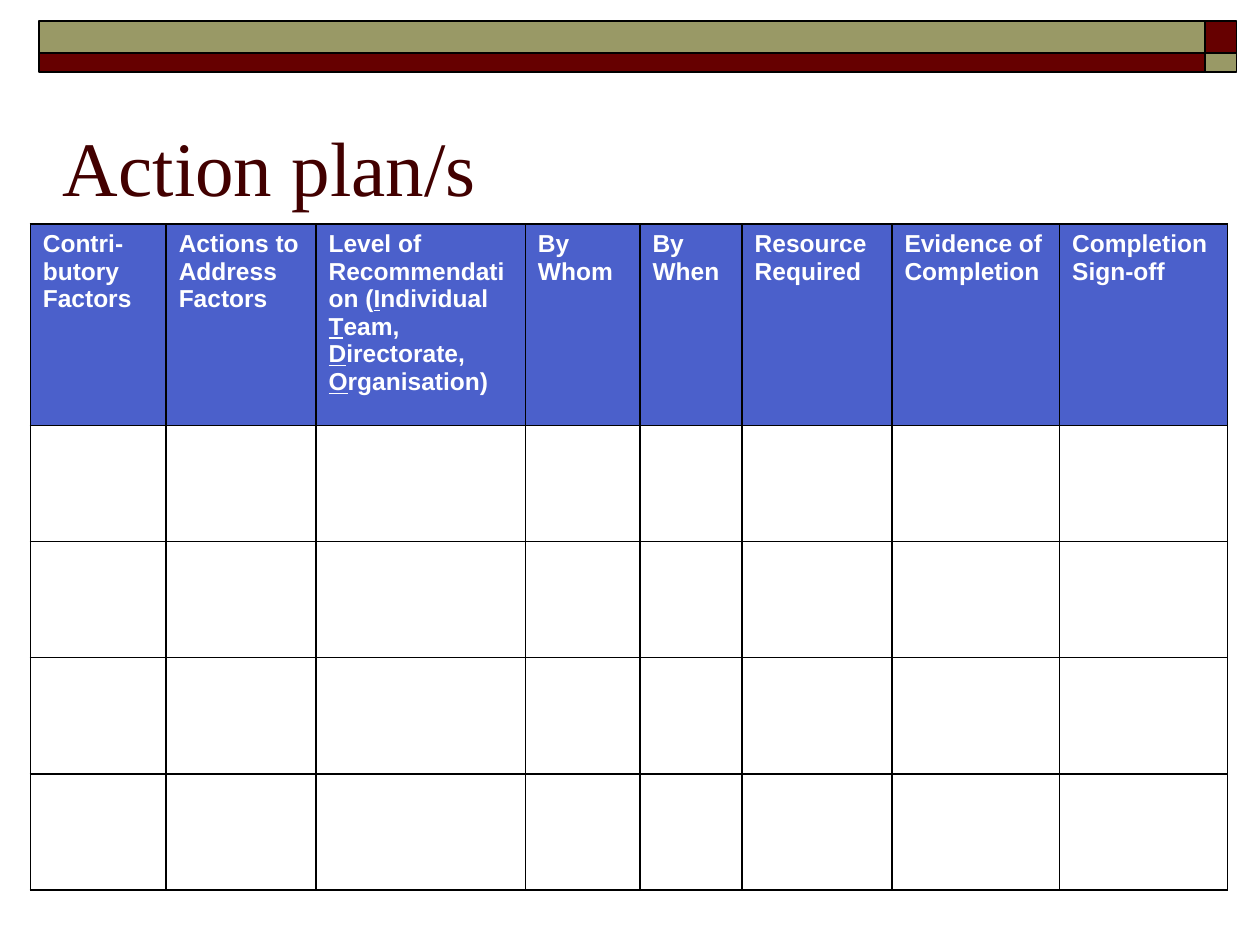
from lxml import etree
from pptx import Presentation
from pptx.dml.color import RGBColor
from pptx.enum.shapes import MSO_SHAPE
from pptx.enum.text import MSO_ANCHOR
from pptx.oxml.ns import qn
from pptx.util import Cm, Pt

RECT = MSO_SHAPE.RECTANGLE
BOTTOM = MSO_ANCHOR.BOTTOM
BLACK, WHITE, RED, OLIVE, BLUE = "000000", "FFFFFF", "660000", "999966", "4B60CB"
TITLE = {"name": "Times New Roman", "size": Pt(44)}
HEAD = {"name": "Arial", "size": Pt(14), "bold": True}
COLS = [2.74, 3.02, 4.22, 2.31, 2.06, 3.02, 3.38, 3.38]
ROWS = [4.06] + [2.34] * 4
LABELS = [
    "Contri-butory Factors",
    "Actions to Address Factors",
    "Level of Recommendation (_I_ndividual _T_eam, _D_irectorate, _O_rganisation)",
    "By Whom",
    "By When",
    "Resource\nRequired",
    "Evidence of\nCompletion",
    "Completion Sign-off",
]


def color(code):
    """Turn a hex string into a colour."""
    return RGBColor.from_string(code)


def style(font, form, code):
    """Apply a dict of format values and a colour to a font."""
    for key, value in form.items():
        setattr(font, key, value)
    font.color.rgb = color(code)


def write(frame, text, form, code):
    """Fill a text frame, underlining what stands between underscores."""
    for i, line in enumerate(text.split("\n")):
        para = frame.add_paragraph() if i else frame.paragraphs[0]
        for j, part in enumerate(line.split("_")):
            run = para.add_run()
            run.text = part
            style(run.font, form, code)
            if j % 2:
                run.font.underline = True


def add_bar(slide, left, top, width, height, fill):
    """Draw one outlined block of the top band."""
    bar = slide.shapes.add_shape(RECT, Cm(left), Cm(top), Cm(width), Cm(height))
    bar.shadow.inherit = False
    bar.fill.solid()
    bar.fill.fore_color.rgb = color(fill)
    bar.line.color.rgb = color(BLACK)
    bar.line.width = Pt(1)


def add_band(slide):
    """Draw the two-row band with swapped colours at its right end."""
    left, long, short = 0.79, 23.5, 0.64
    for top, height, main_fill, end_fill in (
        (0.43, 0.64, OLIVE, RED),
        (1.07, 0.38, RED, OLIVE),
    ):
        add_bar(slide, left, top, long, height, main_fill)
        add_bar(slide, left + long, top, short, height, end_fill)


def add_title(slide, text):
    """Place the slide title on the bottom edge of its box."""
    box = slide.shapes.add_textbox(Cm(1.02), Cm(1.78), Cm(22.86), Cm(2.62))
    box.text_frame.word_wrap = True
    box.text_frame.vertical_anchor = BOTTOM
    write(box.text_frame, text, TITLE, "420000")


def paint(cell, fill):
    """Give a cell black borders and a solid fill."""
    props = cell._tc.get_or_add_tcPr()
    for side in ("a:lnL", "a:lnR", "a:lnT", "a:lnB"):
        line = etree.SubElement(props, qn(side), w=str(Pt(1)))
        solid = etree.SubElement(line, qn("a:solidFill"))
        etree.SubElement(solid, qn("a:srgbClr"), val=BLACK)
    cell.fill.solid()
    cell.fill.fore_color.rgb = color(fill)


def add_plan(slide):
    """Build the action plan table with its header and empty rows."""
    frame = slide.shapes.add_table(
        len(ROWS), len(COLS), Cm(0.61), Cm(4.52), Cm(sum(COLS)), Cm(sum(ROWS))
    )
    table = frame.table
    table.first_row = table.horz_banding = False
    for col, width in zip(table.columns, COLS):
        col.width = Cm(width)
    for i, (row, height) in enumerate(zip(table.rows, ROWS)):
        row.height = Cm(height)
        for cell in row.cells:
            paint(cell, WHITE if i else BLUE)
    for cell, label in zip(table.rows[0].cells, LABELS):
        write(cell.text_frame, label, HEAD, WHITE)


def main():
    """Build and save the slide."""
    deck = Presentation()
    deck.slide_width, deck.slide_height = Cm(25.4), Cm(19.05)
    slide = deck.slides.add_slide(deck.slide_layouts[6])
    add_band(slide)
    add_title(slide, "Action plan/s")
    add_plan(slide)
    deck.save("out.pptx")


if __name__ == "__main__":
    main()
